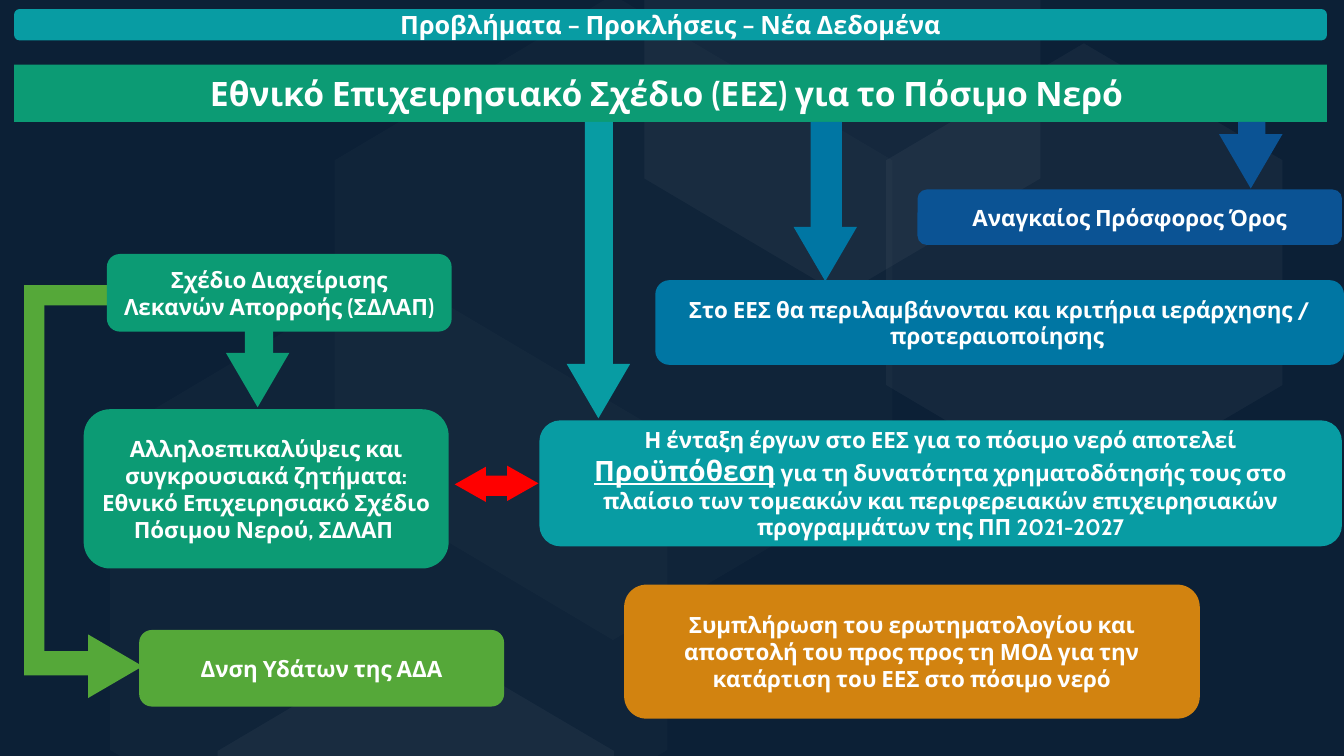
from dataclasses import dataclass

import pptx
import pptx.dml.color
import pptx.enum.shapes
import pptx.enum.text
import pptx.oxml
import pptx.oxml.ns
import pptx.shapes.autoshape
import pptx.slide
import pptx.util

RGBColor = pptx.dml.color.RGBColor
Geometry = pptx.enum.shapes.MSO_SHAPE

PX = 9144
FONT = "Cabin"
NAVY = RGBColor(0x0C, 0x20, 0x36)
WHITE = RGBColor(0xFF, 0xFF, 0xFF)
TEAL = RGBColor(0x08, 0x9C, 0xA3)
GREEN = RGBColor(0x0C, 0x9B, 0x74)
LIME = RGBColor(0x55, 0xA8, 0x39)
BLUE = RGBColor(0x00, 0x76, 0xA3)
ROYAL = RGBColor(0x0B, 0x53, 0x94)
RED = RGBColor(0xFF, 0x00, 0x00)
ORANGE = RGBColor(0xD2, 0x83, 0x10)


@dataclass(frozen=True)
class Hexagon:
    left: int
    top: int
    width: int
    height: int
    opacity: int


@dataclass(frozen=True)
class Area:
    left: int
    top: int
    width: int
    height: int


@dataclass(frozen=True)
class Piece:
    area: Area
    color: RGBColor
    geometry: Geometry = Geometry.RECTANGLE
    rotation: int = 0


@dataclass(frozen=True)
class Run:
    text: str
    size: int
    underline: bool = False


@dataclass(frozen=True)
class Box:
    area: Area
    color: RGBColor
    runs: tuple[Run, ...]


def label(text: str, size: int = 16) -> tuple[Run, ...]:
    return (Run(text, size),)


def head(left: int, top: int, color: RGBColor, rotation: int = 180,
         width: int = 63, height: int = 54) -> Piece:
    return Piece(Area(left, top, width, height), color,
                 Geometry.ISOSCELES_TRIANGLE, rotation)


HEXAGONS = (
    Hexagon(332, -5, 553, 640, 2),
    Hexagon(879, 43, 393, 455, 4),
    Hexagon(639, -162, 393, 455, 4),
    Hexagon(216, 629, 393, 455, 4),
    Hexagon(109, 268, 553, 640, 2),
)

TITLE = Box(Area(14, 64, 1302, 57), GREEN,
            label("Εθνικό Επιχειρησιακό Σχέδιο (ΕΕΣ) για το Πόσιμο Νερό ", 24))

ARROWS = (
    Piece(Area(24, 293, 20, 358), LIME),
    Piece(Area(24, 283, 83, 20), LIME),
    Piece(Area(24, 646, 67, 24), LIME),
    head(83, 634, LIME, 90),
    Piece(Area(580, 121, 28, 243), TEAL),
    head(562, 361, TEAL),
    Piece(Area(804, 121, 31, 105), BLUE),
    head(787, 225, BLUE),
    Piece(Area(1228, 121, 27, 17), ROYAL),
    head(1209, 133, ROYAL),
    Piece(Area(243, 327, 28, 24), GREEN),
    head(224, 350, GREEN),
    Piece(Area(480, 472, 24, 20), RED),
    head(449, 465, RED, 270, 35, 31),
    head(501, 464, RED, 90, 35, 31),
)

BOXES = (
    Box(Area(14, 9, 1302, 31), TEAL,
        label("Προβλήματα – Προκλήσεις – Νέα Δεδομένα", 18)),
    Box(Area(910, 188, 421, 55), ROYAL, label("Αναγκαίος Πρόσφορος Όρος")),
    Box(Area(650, 278, 683, 84), BLUE,
        label("Στο ΕΕΣ θα περιλαμβάνονται και κριτήρια ιεράρχησης / "
              "προτεραιοποίησης ")),
    Box(Area(535, 417, 796, 125), TEAL, (
        Run("Η ένταξη έργων στο ΕΕΣ για το πόσιμο νερό αποτελεί ", 16),
        Run("Προϋπόθεση", 20, True),
        Run(" για τη δυνατότητα χρηματοδότησής τους στο πλαίσιο των τομεακών "
            "και περιφερειακών επιχειρησιακών προγραμμάτων της ΠΠ 2021-2027", 16),
    )),
    Box(Area(106, 252, 342, 77), GREEN,
        label("Σχέδιο Διαχείρισης Λεκανών Απορροής (ΣΔΛΑΠ)")),
    Box(Area(83, 406, 362, 158), GREEN,
        label("Αλληλοεπικαλύψεις και συγκρουσιακά ζητήματα: Εθνικό "
              "Επιχειρησιακό Σχέδιο Πόσιμου Νερού, ΣΔΛΑΠ ")),
    Box(Area(138, 625, 362, 76), LIME, label("Δνση Υδάτων της ΑΔΑ")),
    Box(Area(619, 580, 571, 133), ORANGE,
        label("Συμπλήρωση του ερωτηματολογίου και αποστολή του προς προς τη "
              "ΜΟΔ για την κατάρτιση του ΕΕΣ στο πόσιμο νερό")),
)


def paint(shape: pptx.shapes.autoshape.Shape, color: RGBColor) -> None:
    shape.fill.solid()
    shape.fill.fore_color.rgb = color
    shape.line.fill.background()
    shape.shadow.inherit = False


def draw_hexagon(slide: pptx.slide.Slide, hexagon: Hexagon) -> None:
    middle = hexagon.left + hexagon.width // 2
    right = hexagon.left + hexagon.width
    bottom = hexagon.top + hexagon.height
    slope = round(hexagon.height * 0.256)
    outline = slide.shapes.build_freeform(middle, hexagon.top, scale=float(PX))
    outline.add_line_segments((
        (right, hexagon.top + slope), (right, bottom - slope), (middle, bottom),
        (hexagon.left, bottom - slope), (hexagon.left, hexagon.top + slope),
    ))
    shape = outline.convert_to_shape()
    paint(shape, WHITE)
    tint = shape.element.spPr.find(".//" + pptx.oxml.ns.qn("a:srgbClr"))
    tint.append(pptx.oxml.parse_xml(
        f'<a:alpha {pptx.oxml.ns.nsdecls("a")} val="{hexagon.opacity * 1000}"/>'))


def add_piece(slide: pptx.slide.Slide, piece: Piece) -> pptx.shapes.autoshape.Shape:
    area = piece.area
    shape = slide.shapes.add_shape(piece.geometry, area.left * PX, area.top * PX,
                                   area.width * PX, area.height * PX)
    shape.rotation = piece.rotation
    paint(shape, piece.color)
    return shape


def write(shape: pptx.shapes.autoshape.Shape, runs: tuple[Run, ...]) -> None:
    frame = shape.text_frame
    frame.word_wrap = True
    frame.auto_size = pptx.enum.text.MSO_AUTO_SIZE.NONE
    frame.vertical_anchor = pptx.enum.text.MSO_ANCHOR.MIDDLE
    paragraph = frame.paragraphs[0]
    paragraph.alignment = pptx.enum.text.PP_ALIGN.CENTER
    paragraph.font.name = FONT
    paragraph.font.bold = True
    paragraph.font.color.rgb = WHITE
    paragraph.font.size = pptx.util.Pt(runs[0].size)
    for part in runs:
        run = paragraph.add_run()
        run.text = part.text
        if part.underline:
            run.font.size = pptx.util.Pt(part.size)
            run.font.underline = True


def draw_title(slide: pptx.slide.Slide, box: Box) -> None:
    title = slide.shapes.title
    slide.shapes.element.append(title.element)
    title.left, title.top = box.area.left * PX, box.area.top * PX
    title.width, title.height = box.area.width * PX, box.area.height * PX
    title.element.spPr.append(pptx.oxml.parse_xml(
        f'<a:prstGeom {pptx.oxml.ns.nsdecls("a")} prst="roundRect"><a:avLst/></a:prstGeom>'))
    paint(title, box.color)
    write(title, box.runs)


def main() -> None:
    deck = pptx.Presentation()
    deck.slide_width, deck.slide_height = pptx.util.Inches(13.33), pptx.util.Inches(7.5)
    slide = deck.slides.add_slide(deck.slide_layouts.get_by_name("Title Only"))
    slide.background.fill.solid()
    slide.background.fill.fore_color.rgb = NAVY
    for hexagon in HEXAGONS:
        draw_hexagon(slide, hexagon)
    draw_title(slide, TITLE)
    for piece in ARROWS:
        add_piece(slide, piece)
    for box in BOXES:
        write(add_piece(slide, Piece(box.area, box.color, Geometry.ROUNDED_RECTANGLE)),
              box.runs)
    deck.save("out.pptx")


if __name__ == "__main__":
    main()
